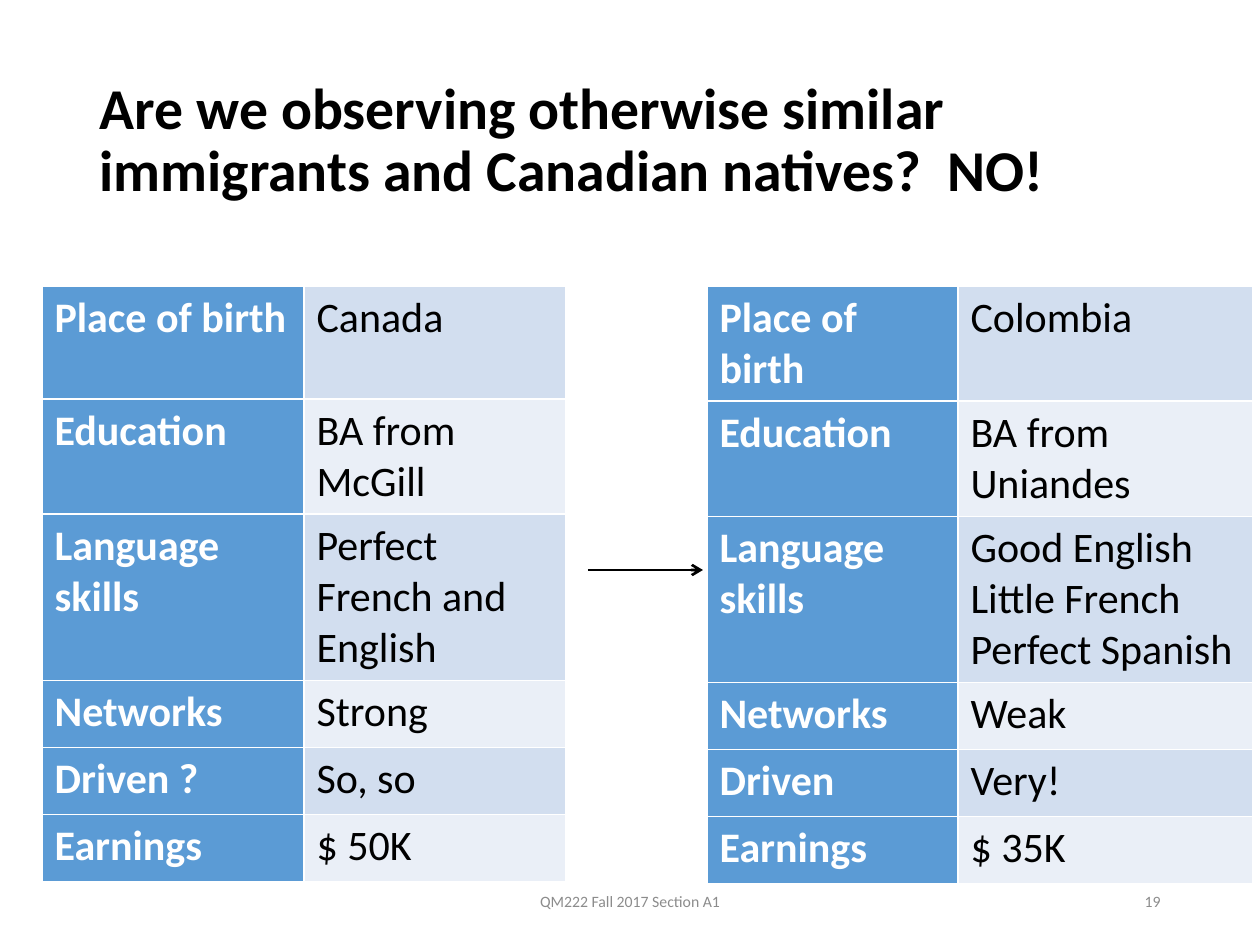
"""Build a slide comparing a Canadian native with an immigrant in two tables."""
import pptx
import pptx.dml.color
import pptx.enum.shapes
import pptx.enum.text
import pptx.oxml
import pptx.oxml.ns
import pptx.util

TITLE = "Are we observing otherwise similar immigrants and Canadian natives?  NO!"
NATIVE = [
    ("Place of birth", "Canada"),
    ("Education", "BA from McGill"),
    ("Language skills", "Perfect French and English"),
    ("Networks", "Strong"),
    ("Driven ?", "So, so"),
    ("Earnings", "$ 50K"),
]
IMMIGRANT = [
    ("Place of birth", "Colombia"),
    ("Education", "BA from Uniandes"),
    ("Language skills", "Good English\nLittle French\nPerfect Spanish"),
    ("Networks", "Weak"),
    ("Driven", "Very!"),
    ("Earnings", "$ 35K"),
]
TABLES = [
    {"left": 42, "columns": (262, 262), "rows": NATIVE},
    {"left": 707, "columns": (251, 295), "rows": IMMIGRANT},
]
ALIGN = pptx.enum.text.PP_ALIGN
FOOTERS = [
    ("QM222 Fall 2017 Section A1", (417, 876, 426, 50), ALIGN.CENTER),
    ("19", (890, 876, 283, 50), ALIGN.RIGHT),
]
TABLE_TOP = 286
ROW_HEIGHTS = (113, 113, 164, 67, 67, 67)
ARROW = (588, 570, 703, 570)
COLORS = {
    "text": "000000",
    "label": "5B9BD5",
    "label_text": "FFFFFF",
    "border": "FFFFFF",
    "footer": "8C8C8C",
}
BANDS = ("D2DEEF", "EAEFF7")
FONT = "Calibri"
EMU_PER_PX = 914400 // 126
NAMESPACE = pptx.oxml.ns.nsdecls("a")


def px(length):
    return pptx.util.Emu(length * EMU_PER_PX)


def rgb(value):
    return pptx.dml.color.RGBColor.from_string(value)


def set_font(paragraph, size, color, bold=False):
    paragraph.font.name = FONT
    paragraph.font.size = pptx.util.Pt(size)
    paragraph.font.bold = bold
    paragraph.font.color.rgb = rgb(color)


def place(shape, box):
    shape.left, shape.top, shape.width, shape.height = map(px, box)


def add_title(slide):
    title = slide.shapes.title
    place(title, (87, 50, 1086, 183))
    frame = title.text_frame
    frame.text = TITLE
    frame.word_wrap = True
    frame.auto_size = pptx.enum.text.MSO_AUTO_SIZE.NONE
    frame.vertical_anchor = pptx.enum.text.MSO_ANCHOR.MIDDLE
    paragraph = frame.paragraphs[0]
    paragraph.alignment = ALIGN.LEFT
    paragraph.line_spacing = 0.9
    set_font(paragraph, 33, COLORS["text"], bold=True)


def format_cell(cell, text, fill, color, bold):
    properties = cell._tc.get_or_add_tcPr()
    for side in "LRTB":
        properties.append(pptx.oxml.parse_xml(
            f'<a:ln{side} {NAMESPACE} w="12700"><a:solidFill>'
            f'<a:srgbClr val="{COLORS["border"]}"/></a:solidFill></a:ln{side}>'
        ))
    cell.fill.solid()
    cell.fill.fore_color.rgb = rgb(fill)
    cell.text = text
    for paragraph in cell.text_frame.paragraphs:
        set_font(paragraph, 24, color, bold)


def add_profile(slide, left, columns, rows):
    table = slide.shapes.add_table(
        len(rows), len(columns), px(left), px(TABLE_TOP),
        px(sum(columns)), px(sum(ROW_HEIGHTS)),
    ).table
    table.first_row = False
    table.horz_banding = False
    for column, width in zip(table.columns, columns):
        column.width = px(width)
    for index, (label, value) in enumerate(rows):
        table.rows[index].height = px(ROW_HEIGHTS[index])
        format_cell(table.cell(index, 0), label, COLORS["label"], COLORS["label_text"], True)
        format_cell(table.cell(index, 1), value, BANDS[index % 2], COLORS["text"], False)


def add_arrow(slide):
    arrow = slide.shapes.add_connector(
        pptx.enum.shapes.MSO_CONNECTOR.STRAIGHT, *map(px, ARROW)
    )
    arrow.line.color.rgb = rgb(COLORS["text"])
    arrow.line.width = pptx.util.Pt(1.5)
    arrow.line._get_or_add_ln().append(
        pptx.oxml.parse_xml(f'<a:tailEnd {NAMESPACE} type="arrow"/>')
    )
    arrow._element.spPr.append(pptx.oxml.parse_xml(f"<a:effectLst {NAMESPACE}/>"))


def add_footer(slide, text, box, alignment):
    frame = slide.shapes.add_textbox(*map(px, box)).text_frame
    frame.word_wrap = True
    frame.vertical_anchor = pptx.enum.text.MSO_ANCHOR.MIDDLE
    frame.text = text
    paragraph = frame.paragraphs[0]
    paragraph.alignment = alignment
    set_font(paragraph, 9, COLORS["footer"])


def main():
    presentation = pptx.Presentation()
    presentation.slide_width = px(1260)
    presentation.slide_height = px(945)
    slide = presentation.slides.add_slide(presentation.slide_layouts.get_by_name("Title Only"))
    add_title(slide)
    for profile in TABLES:
        add_profile(slide, **profile)
    add_arrow(slide)
    for footer in FOOTERS:
        add_footer(slide, *footer)
    presentation.save("out.pptx")


if __name__ == "__main__":
    main()
